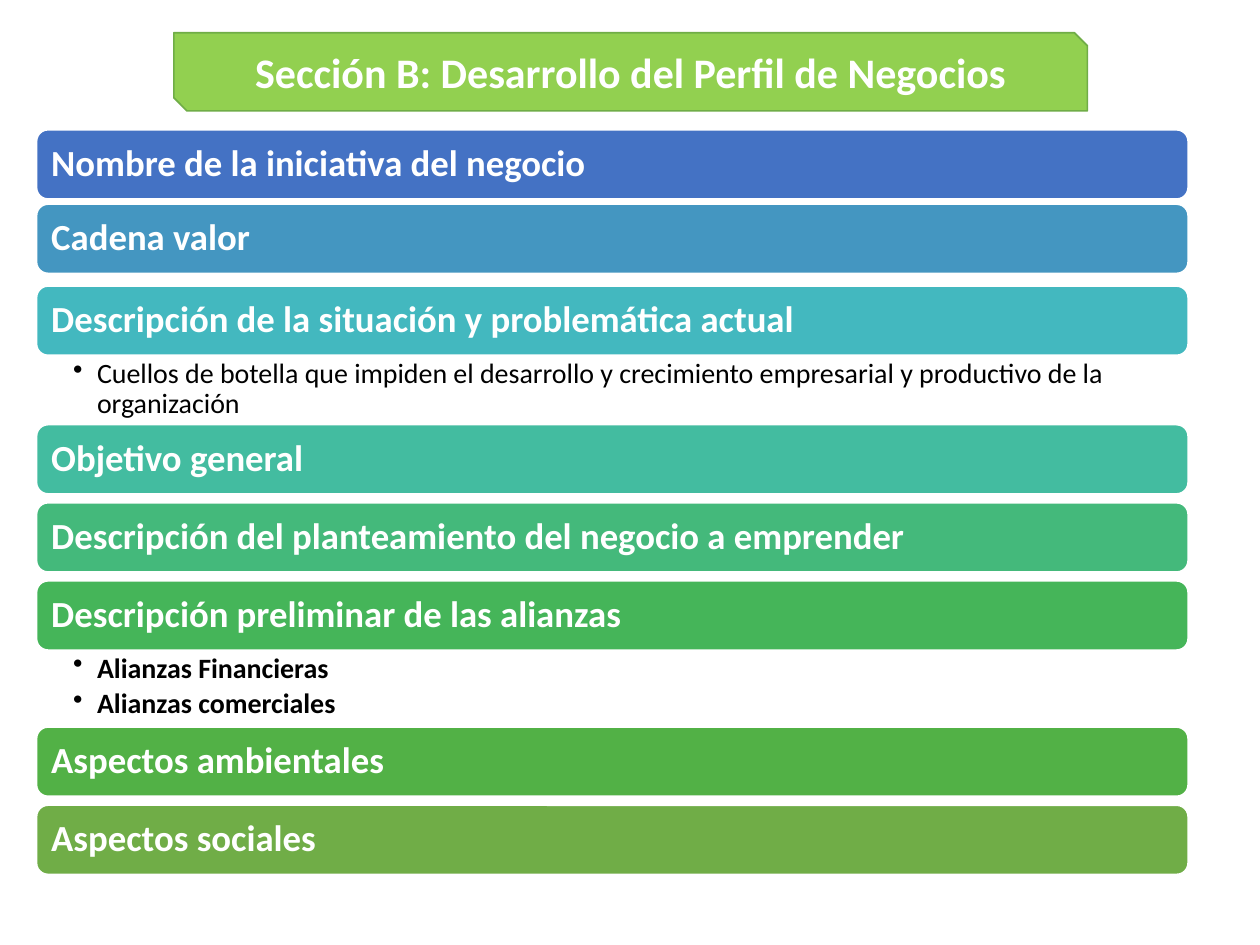
from lxml import etree
from pptx import Presentation
from pptx.dml.color import RGBColor
from pptx.enum.shapes import MSO_SHAPE
from pptx.enum.text import MSO_ANCHOR, PP_ALIGN
from pptx.oxml.ns import qn
from pptx.util import Inches, Pt

ROUND = MSO_SHAPE.ROUNDED_RECTANGLE
SNIP = MSO_SHAPE.SNIP_2_DIAG_RECTANGLE
MIDDLE = MSO_ANCHOR.MIDDLE
LEFT, CENTER = PP_ALIGN.LEFT, PP_ALIGN.CENTER

TITLE = "Sección B: Desarrollo del Perfil de Negocios"
GAP = 0.07
# heading, fill, gap below, bullets, bullets bold, bullets height
ROWS = [
    ("Nombre de la iniciativa del negocio", "4472C4", 0.04, [], False, 0),
    ("Cadena valor", "4496C1", 0.1, [], False, 0),
    ("Descripción de la situación y problemática actual", "43B8BF", 0,
     ["Cuellos de botella que impiden el desarrollo y crecimiento "
      "empresarial y productivo de la organización"], False, 0.55),
    ("Objetivo general", "43BCA0", GAP, [], False, 0),
    ("Descripción del planteamiento del negocio a emprender", "44B97B", GAP,
     [], False, 0),
    ("Descripción preliminar de las alianzas", "45B559", 0,
     ["Alianzas Financieras", "Alianzas comerciales"], True, 0.61),
    ("Aspectos ambientales", "52B146", GAP, [], False, 0),
    ("Aspectos sociales", "70AD47", 0, [], False, 0),
]
X, TOP, WIDTH, HIGH = 0.29, 1.03, 9.14, 0.55


def color(code):
    return RGBColor.from_string(code)


def style(para, size, code, bold):
    font = para.font
    font.name, font.size, font.bold = "Calibri", Pt(size), bold
    font.color.rgb = color(code)


def inset(frame, left, top, right, bottom):
    frame.word_wrap = True
    frame.margin_left, frame.margin_top = Inches(left), Inches(top)
    frame.margin_right, frame.margin_bottom = Inches(right), Inches(bottom)


def add_bar(slide, kind, box, fill, line, text, size, align):
    bar = slide.shapes.add_shape(kind, *map(Inches, box))
    bar.shadow.inherit = False
    bar.fill.solid()
    bar.fill.fore_color.rgb = color(fill)
    bar.line.color.rgb = color(line)
    bar.line.width = Pt(1)
    frame = bar.text_frame
    inset(frame, 0.09, 0.05, 0.09, 0.05)
    frame.vertical_anchor = MIDDLE
    para = frame.paragraphs[0]
    para.text, para.alignment = text, align
    style(para, size, "FFFFFF", True)
    return para


def add_list(slide, box, items, bold):
    frame = slide.shapes.add_textbox(*map(Inches, box)).text_frame
    inset(frame, 0.29, 0.03, 0.16, 0.03)
    for i, item in enumerate(items):
        para = frame.add_paragraph() if i else frame.paragraphs[0]
        para.text, para.level = item, 1
        para.line_spacing, para.space_after = 0.9, Pt(3)
        props = para._p.get_or_add_pPr()
        props.set("marL", str(Inches(0.19)))
        props.set("indent", str(Inches(-0.19)))
        etree.SubElement(props, qn("a:buChar")).set("char", "•")
        style(para, 16, "000000", bold)


def main():
    deck = Presentation()
    deck.slide_width, deck.slide_height = Inches(10), Inches(7.5)
    slide = deck.slides.add_slide(deck.slide_layouts[6])
    y = TOP
    for head, fill, gap, items, bold, tall in ROWS:
        para = add_bar(slide, ROUND, (X, y, WIDTH, HIGH), fill, "FFFFFF",
                       head, 21, LEFT)
        para.line_spacing = 0.9
        y += HIGH
        if items:
            add_list(slide, (X, y, WIDTH, tall), items, bold)
        y += tall + gap
    add_bar(slide, SNIP, (1.38, 0.26, 7.25, 0.62), "92D050", "70AD47",
            TITLE, 24, CENTER)
    deck.save("out.pptx")


if __name__ == "__main__":
    main()
